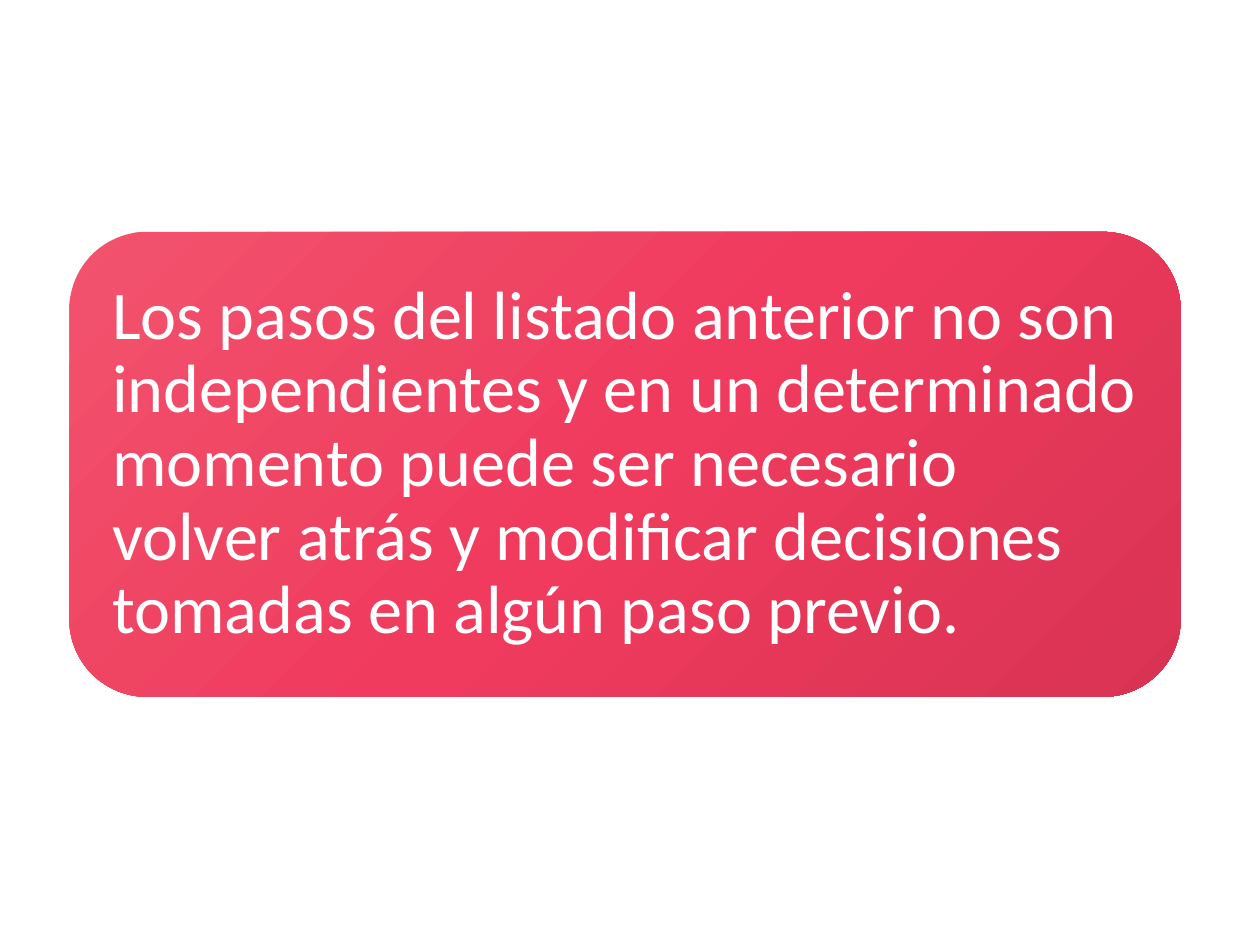
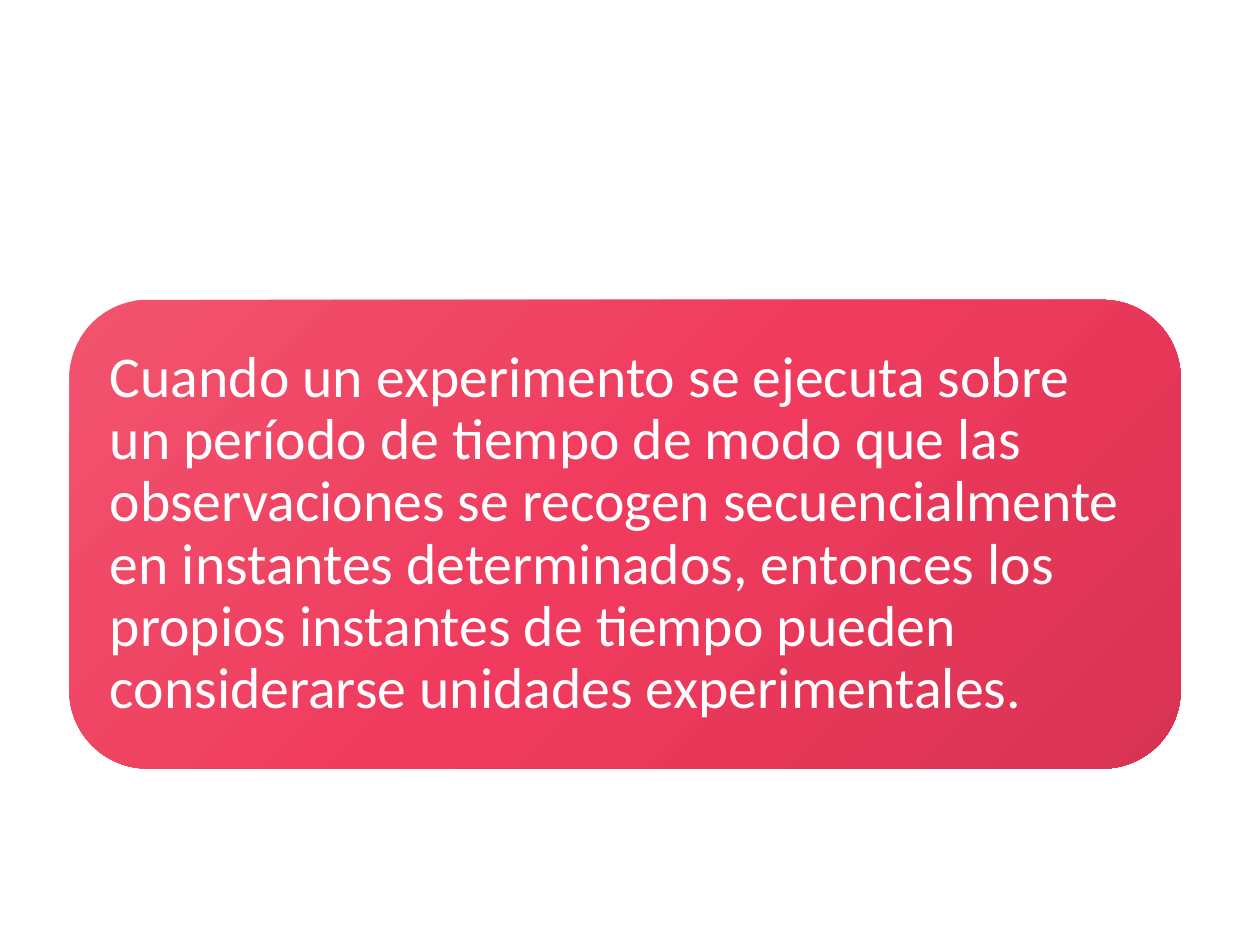
"""Build two slides, each with one rounded gradient card of text."""
from copy import deepcopy
from dataclasses import dataclass

from pptx import Presentation
from pptx.dml.color import RGBColor
from pptx.enum import shapes, text
from pptx.oxml import ns
from pptx.util import Inches, Pt


@dataclass(frozen=True)
class Theme:
    font: str = "Calibri"
    text_color: str = "FFFFFF"
    card_gradient: tuple = ((0, "F1536D"), (0.5, "F03B5E"), (1, "D93353"))
    gradient_angle: int = 315
    large_size: int = 39
    medium_size: int = 33
    line_spacing: float = 0.9
    card_left: float = 0.55
    card_width: float = 8.82


class Deck:
    def __init__(self, theme):
        self.theme = theme
        self.presentation = Presentation()
        self.presentation.slide_width = Inches(10)
        self.presentation.slide_height = Inches(7.5)
        self.slide = None

    def add_slide(self):
        blank_layout = self.presentation.slide_layouts[6]
        self.slide = self.presentation.slides.add_slide(blank_layout)

    def fill_gradient(self, shape):
        shape.fill.gradient()
        shape.fill.gradient_angle = self.theme.gradient_angle
        stop_list = shape._element.spPr.find(ns.qn("a:gradFill")).find(ns.qn("a:gsLst"))
        stop_list.append(deepcopy(stop_list[-1]))
        for stop, (position, color) in zip(shape.fill.gradient_stops, self.theme.card_gradient):
            stop.position = position
            stop.color.rgb = RGBColor.from_string(color)

    def add_card(self, wording, top, height, size, inset):
        theme = self.theme
        shape = self.slide.shapes.add_shape(
            shapes.MSO_SHAPE.ROUNDED_RECTANGLE,
            Inches(theme.card_left), Inches(top), Inches(theme.card_width), Inches(height))
        shape.shadow.inherit = False
        shape.line.fill.background()
        self.fill_gradient(shape)

        frame = shape.text_frame
        frame.word_wrap = True
        frame.vertical_anchor = text.MSO_ANCHOR.MIDDLE
        frame.margin_left = frame.margin_right = Inches(inset)
        frame.margin_top = frame.margin_bottom = Inches(inset)
        frame.text = wording
        paragraph = frame.paragraphs[0]
        paragraph.alignment = text.PP_ALIGN.LEFT
        paragraph.line_spacing = theme.line_spacing
        font = paragraph.runs[0].font
        font.name = theme.font
        font.size = Pt(size)
        font.color.rgb = RGBColor.from_string(theme.text_color)


def main():
    theme = Theme()
    deck = Deck(theme)

    deck.add_slide()
    deck.add_card(
        "Los pasos del listado anterior no son independientes y en un determinado "
        "momento puede ser necesario volver atrás y modificar decisiones tomadas "
        "en algún paso previo.",
        top=1.84, height=3.69, size=theme.large_size, inset=0.16)

    deck.add_slide()
    deck.add_card(
        "Cuando un experimento se ejecuta sobre un período de tiempo de modo que las "
        "observaciones se recogen secuencialmente en instantes determinados, entonces "
        "los propios instantes de tiempo pueden considerarse unidades experimentales.",
        top=2.38, height=3.72, size=theme.medium_size, inset=0.14)

    deck.presentation.save("out.pptx")


if __name__ == "__main__":
    main()
